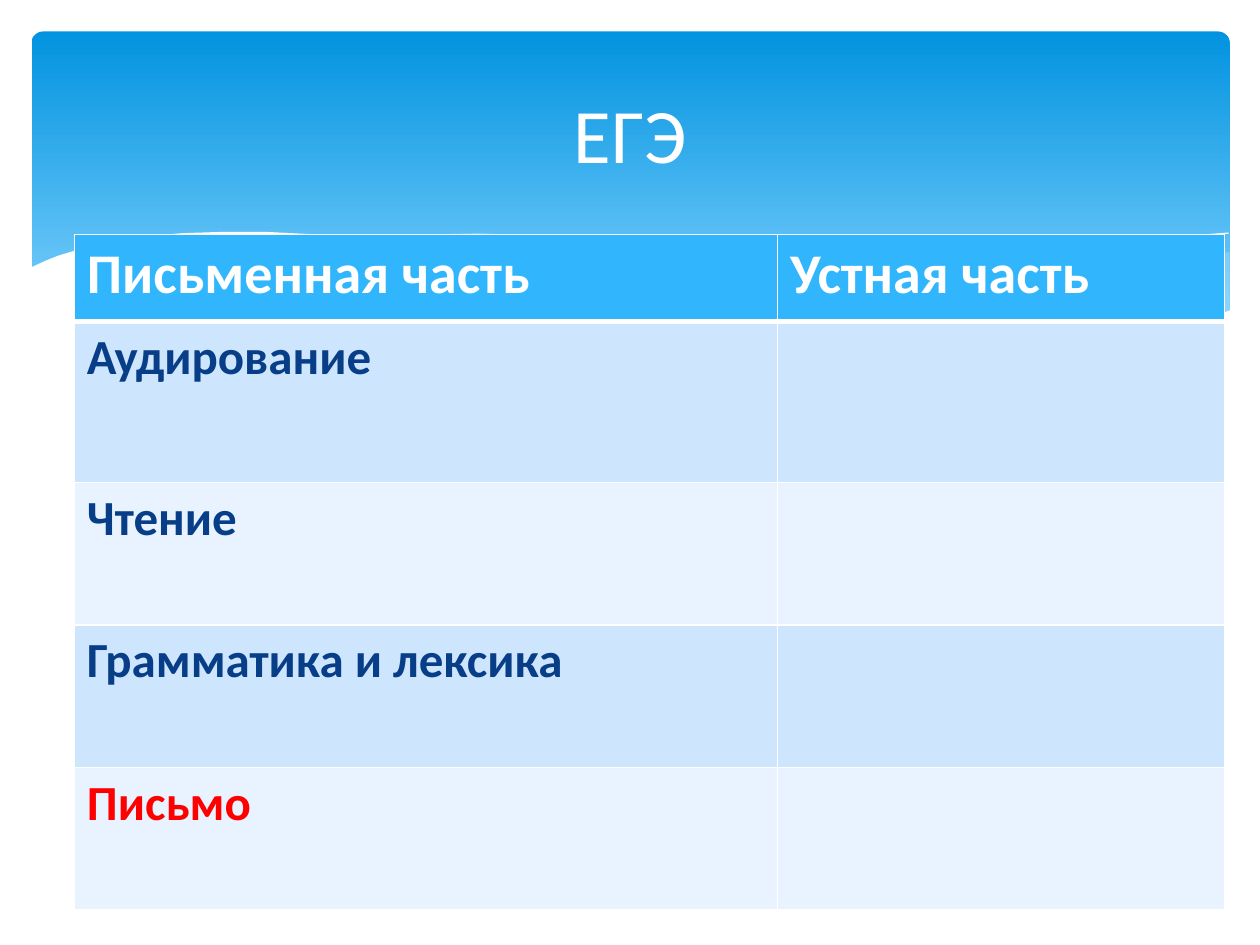
from lxml.etree import SubElement
from pptx import Presentation
from pptx.dml.color import RGBColor
from pptx.enum.shapes import MSO_SHAPE
from pptx.enum.text import MSO_ANCHOR, PP_ALIGN
from pptx.oxml import parse_xml
from pptx.oxml.ns import nsdecls, qn
from pptx.util import Inches, Pt

THEME = {
    "font": "Calibri",
    "white": "FFFFFF", "pale": "C6E7FC", "navy": "073E87", "red": "FF0000",
    "banner_top": "0293E0", "banner_bottom": "83D3FE",
    "header": "31B6FD", "bands": ("CEE5FE", "E8F3FF"),
    "title_size": 44, "header_size": 32, "body_size": 28,
}


def color(name):
    return RGBColor.from_string(THEME[name])


def style_run(run, size, color_name, bold):
    run.font.name = THEME["font"]
    run.font.size = Pt(THEME[size])
    run.font.bold = bold
    run.font.color.rgb = color(color_name)


presentation = Presentation()
presentation.slide_width, presentation.slide_height = Inches(10), Inches(7.5)
slide = presentation.slides.add_slide(presentation.slide_layouts[5])
shapes = slide.shapes

# Gradient banner
banner = shapes.add_shape(MSO_SHAPE.ROUNDED_RECTANGLE,
                          Inches(0.25), Inches(0.25), Inches(9.51), Inches(2.7))
banner.adjustments[0] = 0.034
banner.shadow.inherit = False
banner.line.fill.background()
banner.fill.gradient()
banner.fill.gradient_angle = 270
for stop, name, position in zip(banner.fill.gradient_stops,
                                ("banner_top", "banner_bottom"), (0, 0.9)):
    stop.color.rgb = color(name)
    stop.position = position

# Waves over the banner: fill name (None for an open line), opacity in %, points
WAVES = [
    ("pale", 29, [(9.76, 2), (9.48, 2.04), (9.06, 2.13), (8.61, 2.23), (8.05, 2.37),
                  (7.53, 2.48), (7.06, 2.57), (6.61, 2.65), (7.05, 2.71), (7.45, 2.75),
                  (7.81, 2.77), (8.14, 2.78), (8.54, 2.76), (8.89, 2.72), (9.21, 2.65),
                  (9.49, 2.57), (9.76, 2.47)]),
    ("pale", 40, [(8.93, 2.73), (8.37, 2.65), (7.75, 2.54), (7.06, 2.4), (6.29, 2.22),
                  (5.84, 2.11), (5.41, 2.03), (5.02, 1.96), (4.65, 1.91), (4.2, 1.87),
                  (3.8, 1.85), (3.44, 1.86), (3.13, 1.88), (2.86, 1.91), (3.42, 1.99),
                  (4.04, 2.11), (4.49, 2.22), (5.3, 2.4), (6.01, 2.55), (6.65, 2.66),
                  (7.22, 2.74), (7.73, 2.77), (8.18, 2.78), (8.57, 2.77)]),
    (None, 100, [(3.09, 1.95), (3.28, 1.92), (3.63, 1.89), (4.01, 1.87), (4.5, 1.88),
                 (5.1, 1.92), (5.82, 2), (6.65, 2.13), (7.27, 2.26), (7.95, 2.41),
                 (8.69, 2.61), (9.07, 2.72)]),
    (None, 100, [(6.13, 2.57), (6.53, 2.46), (6.95, 2.35), (7.48, 2.23), (8.06, 2.1),
                 (8.66, 1.99), (9.1, 1.92), (9.51, 1.87), (9.75, 1.85)]),
    ("white", 100, [(9.77, 2.46), (9.5, 2.56), (9.2, 2.65), (8.87, 2.71), (8.5, 2.75),
                    (8.09, 2.77), (7.61, 2.75), (7.08, 2.7), (6.48, 2.62), (5.79, 2.5),
                    (5.03, 2.33), (4.47, 2.2), (3.91, 2.07), (3.4, 1.97), (2.92, 1.9),
                    (2.5, 1.86), (2.11, 1.84), (1.77, 1.84), (1.46, 1.85), (1.19, 1.87),
                    (0.95, 1.91), (0.76, 1.95), (0.59, 1.99), (0.46, 2.03), (0.36, 2.07),
                    (0.23, 2.13), (0.23, 3.29), (9.77, 3.29)]),
]
for fill_name, opacity, points in WAVES:
    start, *rest = [(Inches(x), Inches(y)) for x, y in points]
    builder = shapes.build_freeform(*start)
    builder.add_line_segments(rest, close=fill_name is not None)
    wave = builder.convert_to_shape()
    wave.shadow.inherit = False
    if fill_name is None:
        wave.fill.background()
        wave.line.color.rgb = color("white")
        wave.line.width = Pt(0)
        continue
    wave.line.fill.background()
    wave.fill.solid()
    wave.fill.fore_color.rgb = color(fill_name)
    if opacity < 100:
        rgb = wave.fill._xPr.find(qn("a:solidFill")).find(qn("a:srgbClr"))
        SubElement(rgb, qn("a:alpha"), val=str(opacity * 1000))

# Table of exam parts
ROWS = [("Письменная часть", "Устная часть"), ("Аудирование", ""), ("Чтение", ""),
        ("Грамматика и лексика", ""), ("Письмо", "")]
COLUMN_WIDTHS = (5.58, 3.55)
ROW_HEIGHTS = (0.69, 1.28, 1.13, 1.13, 1.13)
table = shapes.add_table(len(ROWS), len(COLUMN_WIDTHS), Inches(0.59), Inches(1.86),
                         Inches(sum(COLUMN_WIDTHS)), Inches(sum(ROW_HEIGHTS))).table
for column, width in zip(table.columns, COLUMN_WIDTHS):
    column.width = Inches(width)
for row_index, (row, height, texts) in enumerate(zip(table.rows, ROW_HEIGHTS, ROWS)):
    row.height = Inches(height)
    is_header = row_index == 0
    fill = THEME["header"] if is_header else THEME["bands"][(row_index - 1) % 2]
    text_color = "white" if is_header else "red" if texts[0] == "Письмо" else "navy"
    for cell, text in zip(row.cells, texts):
        cell.fill.solid()
        cell.fill.fore_color.rgb = RGBColor.from_string(fill)
        if text:
            cell.text_frame.text = text
            style_run(cell.text_frame.paragraphs[0].runs[0],
                      "header_size" if is_header else "body_size", text_color, True)
        borders = {"L": 1, "R": 1, "T": 3 if row_index == 1 else 1, "B": 3 if is_header else 1}
        for order, (side, points) in enumerate(borders.items()):
            cell._tc.get_or_add_tcPr().insert(order, parse_xml(
                f'<a:ln{side} {nsdecls("a")} w="{Pt(points)}"><a:solidFill>'
                f'<a:srgbClr val="{THEME["white"]}"/></a:solidFill></a:ln{side}>'))

# Title, brought in front of the banner
title = shapes.title
title.left, title.top, title.width, title.height = (
    Inches(0.5), Inches(0.37), Inches(9), Inches(1.37))
title.text_frame.text = "ЕГЭ"
title.text_frame.vertical_anchor = MSO_ANCHOR.MIDDLE
title.text_frame.paragraphs[0].alignment = PP_ALIGN.CENTER
style_run(title.text_frame.paragraphs[0].runs[0], "title_size", "white", False)
shapes._spTree.append(title._element)

presentation.save("out.pptx")
